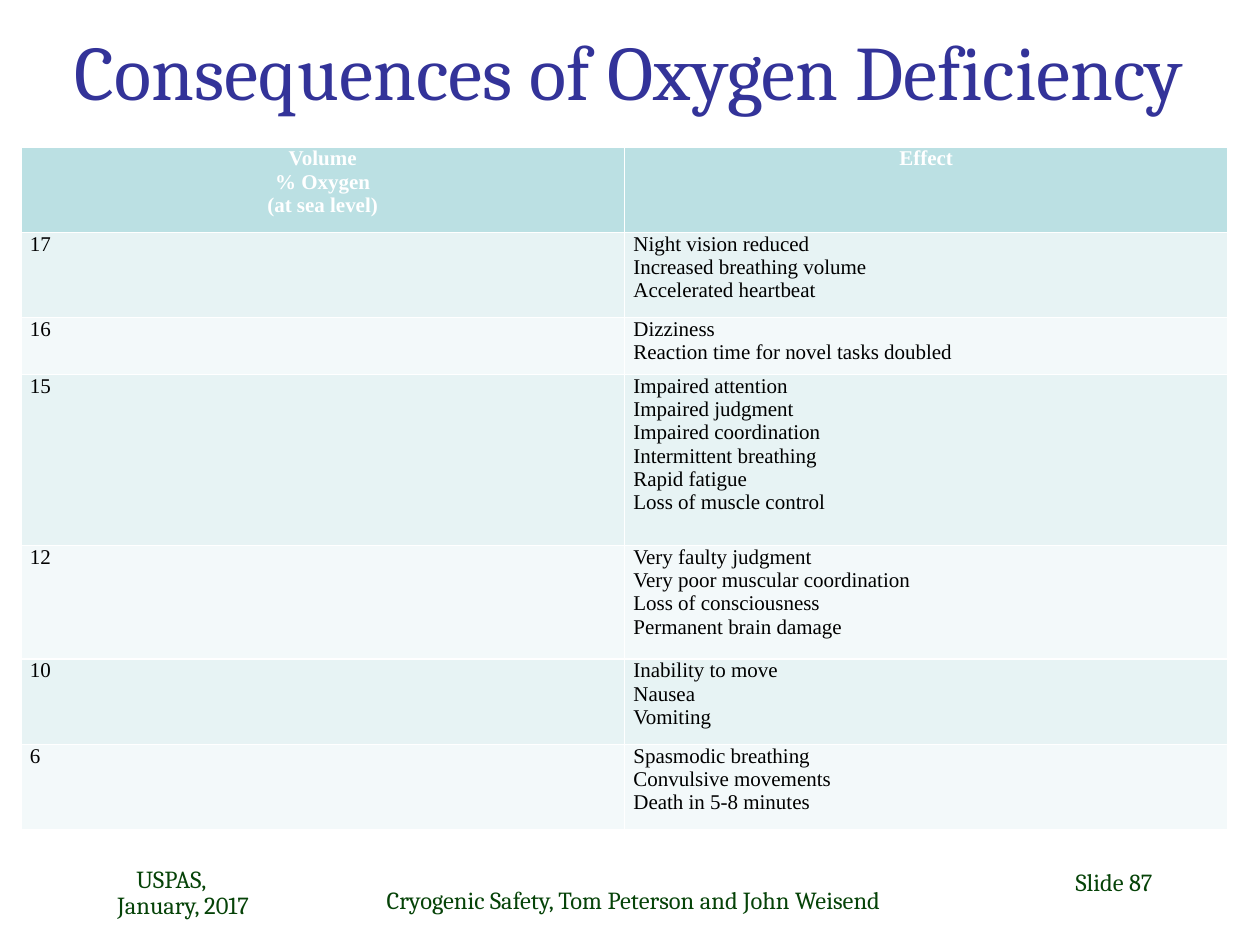
from pptx import Presentation
from pptx import util as u
from pptx.dml.color import RGBColor
from pptx.enum import text

PX = u.Inches(1) // 126
COLORS = {"title": "333399", "footer": "064308", "header": "BBE0E3",
          "odd": "E7F3F4", "even": "F3F9FA", "white": "FFFFFF", "black": "000000"}

TITLE = ("Consequences of Oxygen Deficiency", (10, 37, 1239, 66))
HEADER = (["Volume", "% Oxygen", "(at sea level)"], ["Effect"])
EFFECTS = [
    ("17", ["Night vision reduced", "Increased breathing volume", "Accelerated heartbeat"]),
    ("16", ["Dizziness", "Reaction time for novel tasks doubled"]),
    ("15", ["Impaired attention", "Impaired judgment", "Impaired coordination",
            "Intermittent breathing", "Rapid fatigue", "Loss of muscle control"]),
    ("12", ["Very faulty judgment", "Very poor muscular coordination",
            "Loss of consciousness", "Permanent brain damage"]),
    ("10", ["Inability to move", "Nausea", "Vomiting"]),
    ("6", ["Spasmodic breathing", "Convulsive movements", "Death in 5-8 minutes"]),
]
TABLE_BOX = (21, 147, 1207, 683)

LEFT, CENTER, RIGHT = text.PP_ALIGN.LEFT, text.PP_ALIGN.CENTER, text.PP_ALIGN.RIGHT
FOOTERS = [
    ("Cryogenic Safety, Tom Peterson and John Weisend", (336, 882, 557, 42), RIGHT, 0.9, {}),
    ("Slide 87", (903, 861, 262, 63), RIGHT, 1.0, {}),
    ("USPAS,\vJanuary, 2017", (63, 861, 199, 63), LEFT, 0.9, {"marL": 42, "indent": 19}),
]
FONTS = {
    "title": {"name": "Cambria", "size": u.Pt(44), "bold": False},
    "footer": {"name": "Cambria", "size": u.Pt(14)},
    "header": {"name": "Times New Roman", "size": u.Pt(12), "bold": True},
    "body": {"name": "Times New Roman", "size": u.Pt(12), "bold": False},
}
CELL = {"margin_left": 9 * PX, "margin_right": 9 * PX, "margin_top": 0, "margin_bottom": 0,
        "vertical_anchor": text.MSO_ANCHOR.TOP}


def emu(box):
    return [length * PX for length in box]


def apply(target, values):
    for name, value in values.items():
        setattr(target, name, value)


def write(frame, lines, font, color, align):
    frame.text = "\n".join(lines)
    for line in frame.paragraphs:
        line.alignment = align
        for run in line.runs:
            apply(run.font, FONTS[font])
            run.font.color.rgb = RGBColor.from_string(COLORS[color])


def add_title(slide):
    words, box = TITLE
    title = slide.shapes.title
    apply(title, dict(zip(("left", "top", "width", "height"), emu(box))))
    title.text_frame.vertical_anchor = text.MSO_ANCHOR.MIDDLE
    write(title.text_frame, [words], "title", "title", CENTER)


def add_footers(slide):
    for words, box, align, spacing, indents in FOOTERS:
        frame = slide.shapes.add_textbox(*emu(box)).text_frame
        frame.word_wrap = True
        write(frame, [words], "footer", "footer", align)
        line = frame.paragraphs[0]
        line.line_spacing = spacing
        for name, length in indents.items():
            line._p.get_or_add_pPr().set(name, str(length * PX))


def add_effects(slide):
    rows = [HEADER] + [([volume], effects) for volume, effects in EFFECTS]
    line_counts = [max(map(len, row)) for row in rows]
    table = slide.shapes.add_table(len(rows), 2, *emu(TABLE_BOX)).table
    for r, row in enumerate(rows):
        table.rows[r].height = TABLE_BOX[3] * PX * line_counts[r] // sum(line_counts)
        fill = "header" if r == 0 else "odd" if r % 2 else "even"
        style = ("header", "white", CENTER) if r == 0 else ("body", "black", LEFT)
        for c, lines in enumerate(row):
            cell = table.cell(r, c)
            apply(cell, CELL)
            cell.fill.solid()
            cell.fill.fore_color.rgb = RGBColor.from_string(COLORS[fill])
            write(cell.text_frame, lines, *style)


def main():
    deck = Presentation()
    deck.slide_width, deck.slide_height = u.Inches(10), u.Inches(7.5)
    slide = deck.slides.add_slide(deck.slide_layouts[5])
    add_title(slide)
    add_footers(slide)
    add_effects(slide)
    deck.save("out.pptx")


if __name__ == "__main__":
    main()
